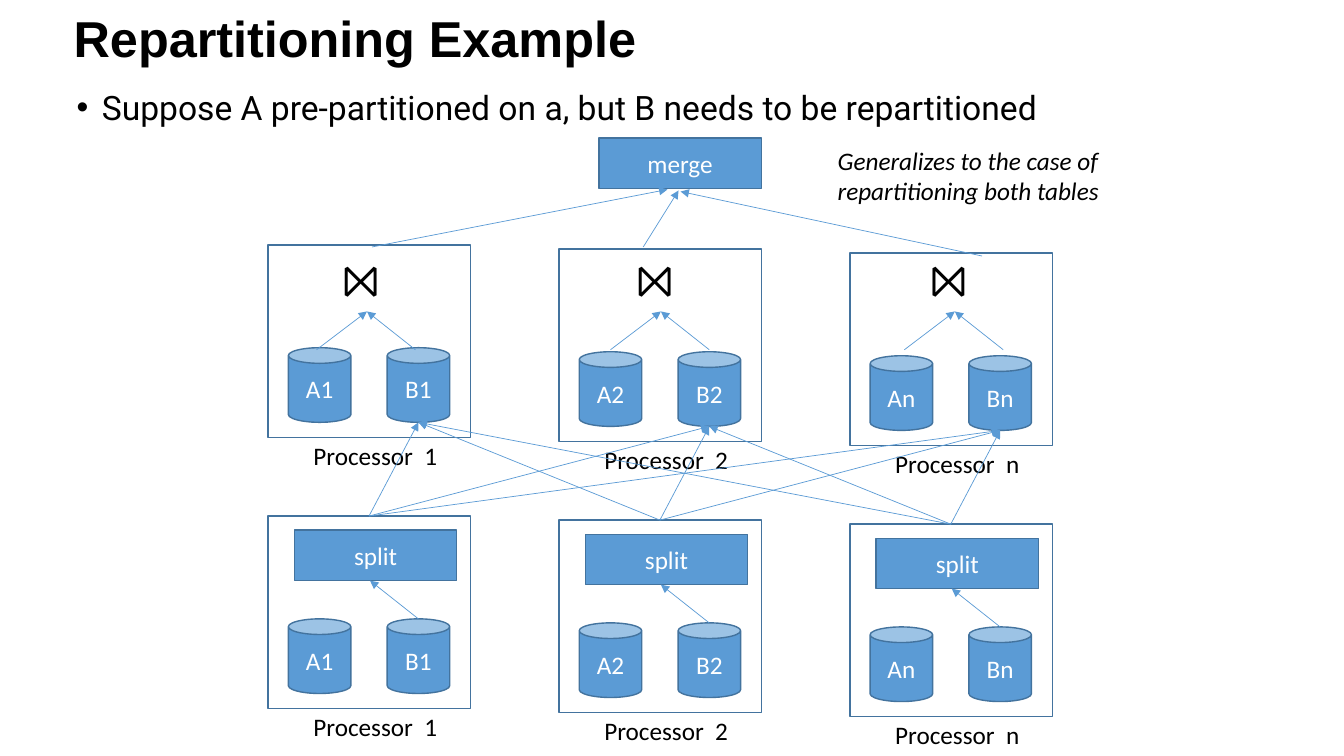
from dataclasses import dataclass

from lxml.etree import SubElement
from pptx import Presentation
from pptx.dml.color import RGBColor
from pptx.enum.shapes import MSO_CONNECTOR, MSO_SHAPE
from pptx.enum.text import MSO_ANCHOR, MSO_AUTO_SIZE, PP_ALIGN
from pptx.oxml.ns import qn
from pptx.util import Inches, Pt


@dataclass(frozen=True)
class Theme:
    blue: RGBColor = RGBColor(0x5B, 0x9B, 0xD5)
    outline: RGBColor = RGBColor(0x43, 0x73, 0x9E)
    black: RGBColor = RGBColor(0, 0, 0)
    white: RGBColor = RGBColor(255, 255, 255)
    title_font: str = "Arial"
    body_font: str = "Roboto"
    label_font: str = "Calibri"
    title_size: int = 36
    body_size: int = 24
    label_size: int = 18
    join_size: int = 32
    outline_width: float = 1
    arrow_width: float = 0.5


THEME = Theme()
PROCESSORS = ("1", "2", "n")
COLUMN_LEFT, COLUMN_STEP = 2.66, 2.885
JOIN_LEFT, JOIN_STEP = 3.3, 2.915
ROW_DROP = 0.04
JOIN_TOP, SPLIT_TOP = 2.43, 5.12
CAN_A, CAN_B = 0.2, 1.18
CAN_WIDTH, CAN_HEIGHT = 0.62, 0.74
BLOCK_WIDTH, BLOCK_HEIGHT = 1.61, 0.5
CAN_B_CENTER = CAN_B + CAN_WIDTH / 2


def write_text(shape, text, font=THEME.label_font, size=THEME.label_size,
               color=THEME.black, bold=False, italic=False,
               align=PP_ALIGN.LEFT, anchor=MSO_ANCHOR.TOP):
    frame = shape.text_frame
    frame.word_wrap = True
    frame.vertical_anchor = anchor
    paragraph = frame.paragraphs[0]
    paragraph.alignment = align
    run = paragraph.add_run()
    run.text = text
    run.font.name = font
    run.font.size = Pt(size)
    run.font.bold = bold
    run.font.italic = italic
    run.font.color.rgb = color
    return paragraph


def place(shape, left, top, width, height):
    shape.left, shape.top = Inches(left), Inches(top)
    shape.width, shape.height = Inches(width), Inches(height)


def add_title(slide, text):
    title = slide.shapes.title
    place(title, 0.63, -0.32, 8.62, 1.45)
    paragraph = write_text(title, text, font=THEME.title_font, size=THEME.title_size,
                           bold=True, anchor=MSO_ANCHOR.MIDDLE)
    paragraph.line_spacing = 0.9


def add_bullet(slide, text):
    body = slide.placeholders[1]
    place(body, 0.66, 0.81, 10.18, 1.01)
    paragraph = write_text(body, text, font=THEME.body_font, size=THEME.body_size)
    paragraph.space_before = Pt(10)
    properties = paragraph._p.get_or_add_pPr()
    properties.set("marL", str(Inches(0.25)))
    properties.set("indent", str(Inches(-0.25)))
    SubElement(properties, qn("a:buFont"), typeface="Arial")
    SubElement(properties, qn("a:buChar"), char="•")


def add_label(slide, text, left, top, width, height, **text_format):
    label = slide.shapes.add_textbox(Inches(left), Inches(top), Inches(width), Inches(height))
    write_text(label, text, **text_format)
    label.text_frame.auto_size = MSO_AUTO_SIZE.SHAPE_TO_FIT_TEXT


def add_outlined(slide, kind, left, top, width, height, text=None):
    shape = slide.shapes.add_shape(kind, Inches(left), Inches(top), Inches(width), Inches(height))
    shape.shadow.inherit = False
    shape.line.color.rgb = THEME.outline
    shape.line.width = Pt(THEME.outline_width)
    if text is None:
        shape.fill.background()
        return
    shape.fill.solid()
    shape.fill.fore_color.rgb = THEME.blue
    write_text(shape, text, color=THEME.white, align=PP_ALIGN.CENTER, anchor=MSO_ANCHOR.MIDDLE)


def add_block(slide, text, left, top):
    add_outlined(slide, MSO_SHAPE.RECTANGLE, left, top, BLOCK_WIDTH, BLOCK_HEIGHT, text)


def add_arrow(slide, start, end):
    points = [Inches(value) for value in (*start, *end)]
    arrow = slide.shapes.add_connector(MSO_CONNECTOR.STRAIGHT, *points)
    arrow.line.color.rgb = THEME.blue
    arrow.line.width = Pt(THEME.arrow_width)
    SubElement(arrow.line._get_or_add_ln(), qn("a:tailEnd"), type="triangle")
    SubElement(arrow._element.spPr, qn("a:effectLst"))


def add_processor(slide, name, left, top):
    add_outlined(slide, MSO_SHAPE.RECTANGLE, left, top, 2.01, 1.91)
    for table, offset in (("A", CAN_A), ("B", CAN_B)):
        add_outlined(slide, MSO_SHAPE.CAN, left + offset, top + 1.02,
                     CAN_WIDTH, CAN_HEIGHT, table + name)
    add_label(slide, f"Processor  {name}", left + 0.35, top + 1.89, 1.45, 0.4)


def add_split(slide, left, top):
    add_block(slide, "split", left + 0.26, top + 0.14)
    add_arrow(slide, (left + CAN_B_CENTER, top + 1.02), (left + 1.01, top + 0.64))


def add_join(slide, left):
    add_label(slide, "⨝", left, 2.45, 0.67, 0.64, size=THEME.join_size)
    for offset in (-0.16, 0.82):
        add_arrow(slide, (left + offset, 3.47), (left + 0.34, 3.09))


def add_repartitioning(slide, columns):
    for source_left, source_drop in columns:
        for target_left, target_drop in columns:
            add_arrow(slide, (source_left + 1, SPLIT_TOP + source_drop),
                      (target_left + CAN_B_CENTER, JOIN_TOP + 1.76 + target_drop))


def add_merge(slide):
    add_block(slide, "merge", 5.94, 1.37)
    for start, end in (((3.69, 2.45), (6.62, 1.88)),
                       ((6.38, 2.45), (6.73, 1.89)),
                       ((9.74, 2.54), (6.75, 1.9))):
        add_arrow(slide, start, end)


def main():
    presentation = Presentation()
    presentation.slide_width, presentation.slide_height = Inches(13.33), Inches(7.5)
    slide = presentation.slides.add_slide(presentation.slide_layouts[1])
    add_title(slide, "Repartitioning Example")
    add_bullet(slide, "Suppose A pre-partitioned on a, but B needs to be repartitioned")

    columns = [(COLUMN_LEFT + COLUMN_STEP * index, ROW_DROP * index)
               for index in range(len(PROCESSORS))]
    for name, (left, drop) in zip(PROCESSORS, columns):
        add_processor(slide, name, left, SPLIT_TOP + drop)
        add_split(slide, left, SPLIT_TOP + drop)
        add_processor(slide, name, left, JOIN_TOP + drop)
    add_repartitioning(slide, columns)
    for index in range(len(PROCESSORS)):
        add_join(slide, JOIN_LEFT + JOIN_STEP * index)
    add_merge(slide)
    add_label(slide, "Generalizes to the case of repartitioning both tables",
              8.21, 1.39, 2.96, 0.71, italic=True)
    presentation.save("out.pptx")


if __name__ == "__main__":
    main()
